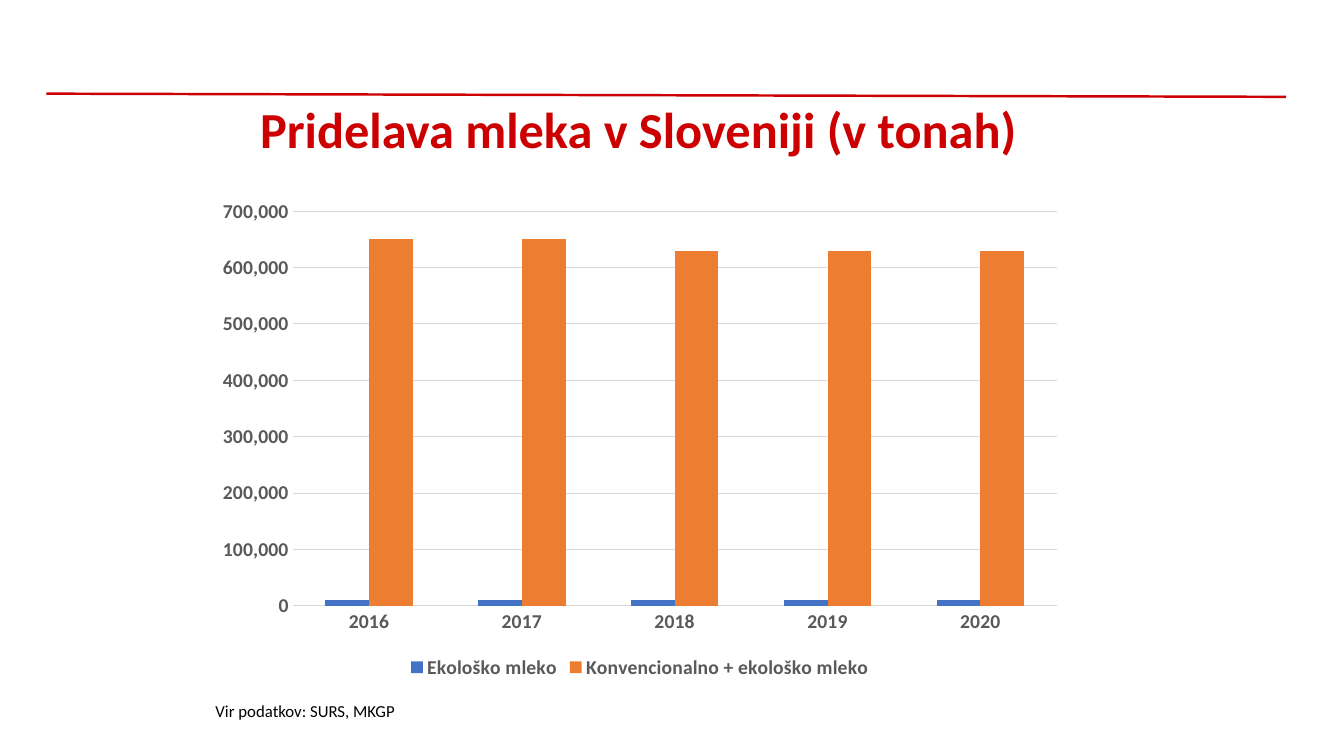
from pptx import Presentation
from pptx import util as u
from pptx.chart import data as chart_data
from pptx.dml import color
from pptx.enum import chart as ch
from pptx.enum import shapes, text
from pptx.oxml import ns
from lxml import etree

FONT = "Calibri"
RED, GREY, GRID, BLACK = "CC0000", "595959", "D9D9D9", "000000"
YEARS = ["2016", "2017", "2018", "2019", "2020"]
MILK = [
    ("Ekološko mleko", "4472C4", [10000, 10000, 10000, 10000, 10000]),
    ("Konvencionalno + ekološko mleko", "ED7D31",
     [650000, 650000, 630000, 630000, 630000]),
]


def rgb(hex_value):
    return color.RGBColor.from_string(hex_value)


def cm_box(*lengths):
    return [u.Cm(length) for length in lengths]


def style_font(font, size, hex_value, bold=False):
    font.name = FONT
    font.size = u.Pt(size)
    font.bold = bold
    font.color.rgb = rgb(hex_value)


def style_line(line, hex_value, width):
    line.color.rgb = rgb(hex_value)
    line.width = u.Pt(width)


def write_text(shape, wording, size, hex_value, bold=False):
    frame = shape.text_frame
    frame.text = wording
    frame.word_wrap = True
    frame.auto_size = text.MSO_AUTO_SIZE.SHAPE_TO_FIT_TEXT
    frame.vertical_anchor = text.MSO_ANCHOR.TOP
    paragraph = frame.paragraphs[0]
    paragraph.alignment = text.PP_ALIGN.LEFT
    style_font(paragraph.runs[0].font, size, hex_value, bold)


def add_rule(slide, left, top, width, drop):
    rule = slide.shapes.add_connector(
        shapes.MSO_CONNECTOR.STRAIGHT,
        *cm_box(left, top, left + width, top + drop))
    style_line(rule.line, RED, 1.75)
    etree.SubElement(rule._element.spPr, ns.qn("a:effectLst"))


def add_title(slide, left, top, width, height):
    title = slide.shapes.title
    title.left, title.top, title.width, title.height = cm_box(
        left, top, width, height)
    write_text(title, "Pridelava mleka v Sloveniji (v tonah)", 36, RED, True)


def add_milk_chart(slide, left, top, width, height):
    data = chart_data.CategoryChartData(number_format="#,##0")
    data.categories = YEARS
    for name, _, tonnes in MILK:
        data.add_series(name, tonnes)
    chart = slide.shapes.add_chart(
        ch.XL_CHART_TYPE.COLUMN_CLUSTERED,
        *cm_box(left, top, width, height), data).chart
    chart.has_title = False
    style_font(chart.font, 10, BLACK)

    # Columns
    plot = chart.plots[0]
    plot.gap_width = 150
    plot.overlap = 0
    plot.vary_by_categories = False
    for series, (_, hex_value, _) in zip(plot.series, MILK):
        series.format.fill.solid()
        series.format.fill.fore_color.rgb = rgb(hex_value)
        series.invert_if_negative = False

    # Axes
    for axis in (chart.category_axis, chart.value_axis):
        axis.major_tick_mark = axis.minor_tick_mark = ch.XL_TICK_MARK.NONE
        style_font(axis.tick_labels.font, 14, GREY, True)
    style_line(chart.category_axis.format.line, GRID, 0.75)
    tonnes_axis = chart.value_axis
    tonnes_axis.minimum_scale, tonnes_axis.maximum_scale = 0, 700000
    tonnes_axis.major_unit = 100000
    tonnes_axis.tick_labels.number_format = "#,##0"
    tonnes_axis.tick_labels.number_format_is_linked = False
    tonnes_axis.format.line.fill.background()
    style_line(tonnes_axis.major_gridlines.format.line, GRID, 0.75)

    # Legend
    chart.has_legend = True
    chart.legend.position = ch.XL_LEGEND_POSITION.BOTTOM
    chart.legend.include_in_layout = False
    style_font(chart.legend.font, 14, GREY, True)


def add_source(slide, left, top, width, height):
    source = slide.shapes.add_textbox(*cm_box(left, top, width, height))
    write_text(source, "Vir podatkov: SURS, MKGP", 12, BLACK)


def main():
    presentation = Presentation()
    presentation.slide_width, presentation.slide_height = cm_box(33.87, 19.05)
    title_only = presentation.slide_layouts[5]
    slide = presentation.slides.add_slide(title_only)
    add_rule(slide, 1.17, 2.36, 31.24, 0.08)
    add_milk_chart(slide, 5.18, 4.77, 21.89, 12.45)
    add_source(slide, 5.18, 17.53, 5.38, 0.76)
    add_title(slide, 6.3, 2.35, 23.24, 1.8)
    presentation.save("out.pptx")


if __name__ == "__main__":
    main()
